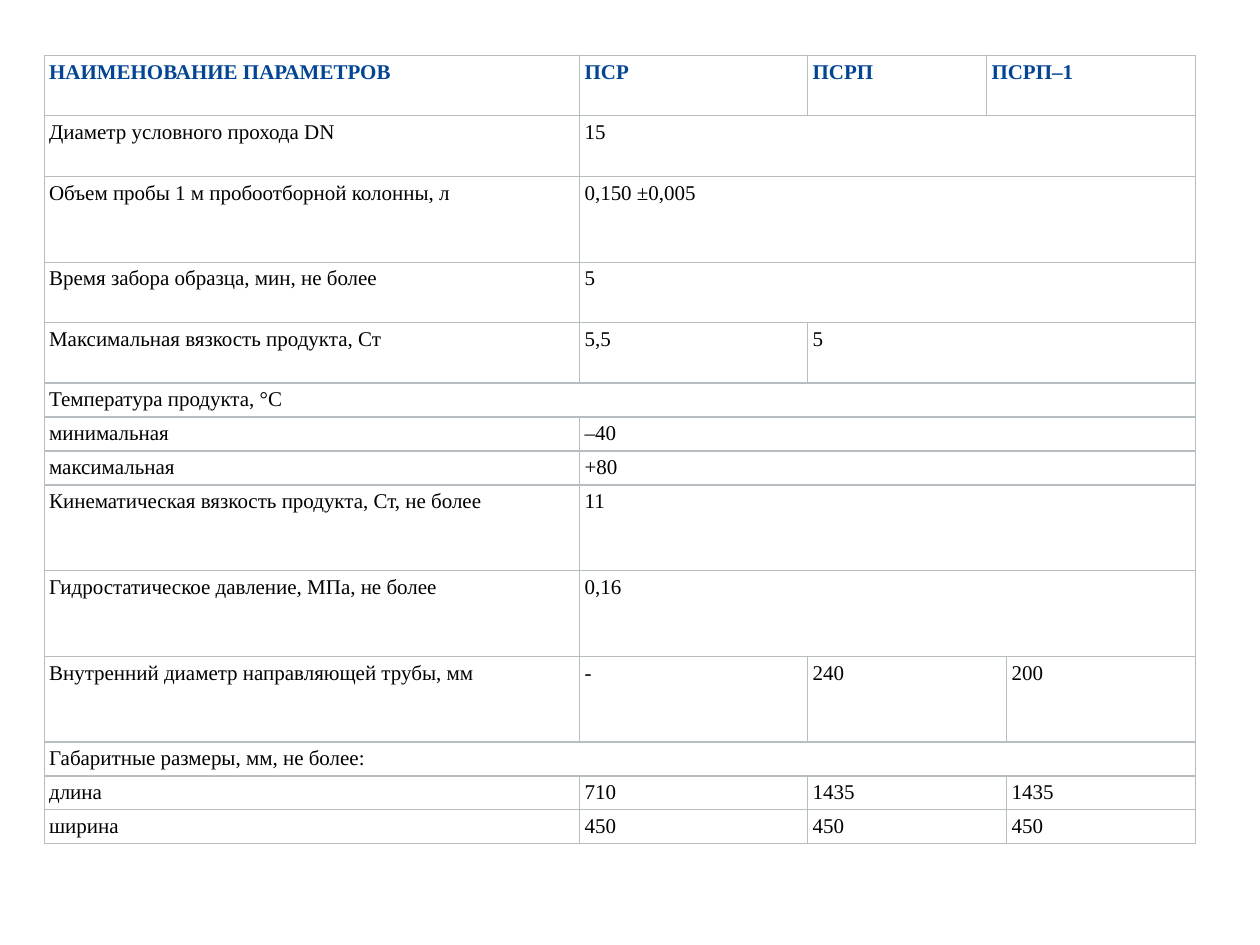
"""Build a slide with a table of sampler parameters."""
from lxml.etree import SubElement
from pptx import Presentation
from pptx.dml.color import RGBColor
from pptx.enum.text import PP_ALIGN as Align
from pptx.oxml.ns import qn
from pptx.util import Inches, Pt

GRID_COLUMNS, GRID_ROWS = 1000, 750
COLUMN_WIDTHS = (425, 181, 142, 16, 150)
SINGLE, WIDTH_ROW, DOUBLE, TRIPLE = 27, 26, 48, 68

HEADER_SPANS = (1, 1, 1, 2)
SHARED_SPANS = (1, 4)
PAIR_SPANS = (1, 1, 3)
MODEL_SPANS = (1, 1, 2, 1)
SECTION_SPANS = (5,)

PARAMETERS = (
    (DOUBLE, HEADER_SPANS, ("НАИМЕНОВАНИЕ ПАРАМЕТРОВ", "ПСР", "ПСРП", "ПСРП–1")),
    (DOUBLE, SHARED_SPANS, ("Диаметр условного прохода DN", "15")),
    (TRIPLE, SHARED_SPANS, ("Объем пробы 1 м пробоотборной колонны, л", "0,150 ±0,005")),
    (DOUBLE, SHARED_SPANS, ("Время забора образца, мин, не более", "5")),
    (DOUBLE, PAIR_SPANS, ("Максимальная вязкость продукта, Ст", "5,5", "5")),
    (SINGLE, SECTION_SPANS, ("Температура продукта, °С",)),
    (SINGLE, SHARED_SPANS, ("минимальная", "–40")),
    (SINGLE, SHARED_SPANS, ("максимальная", "+80")),
    (TRIPLE, SHARED_SPANS, ("Кинематическая вязкость продукта, Ст, не более", "11")),
    (TRIPLE, SHARED_SPANS, ("Гидростатическое давление, МПа, не более", "0,16")),
    (TRIPLE, MODEL_SPANS, ("Внутренний диаметр направляющей трубы, мм", "-", "240", "200")),
    (SINGLE, SECTION_SPANS, ("Габаритные размеры, мм, не более:",)),
    (SINGLE, MODEL_SPANS, ("длина", "710", "1435", "1435")),
    (WIDTH_ROW, MODEL_SPANS, ("ширина", "450", "450", "450")),
)


def color(value):
    """Return the colour of a hex string."""
    return RGBColor.from_string(value)


class SlideBuilder:
    """Hold the table style and the current slide."""

    font_name = "Times New Roman"
    font_size = Pt(12)
    header_color = "024594"
    text_color = "000000"
    fill_color = "FFFFFF"
    border_color = "B7BEC1"
    border_width = Pt(0.75)
    margin = Inches(0.04)

    def __init__(self, presentation):
        """Add a blank slide and measure its grid."""
        self.slide = presentation.slides.add_slide(presentation.slide_layouts[6])
        self.column = presentation.slide_width // GRID_COLUMNS
        self.row = presentation.slide_height // GRID_ROWS

    def add_table(self, left, top, widths, records):
        """Add a table whose records give height, spans and texts."""
        heights = [height for height, _, _ in records]
        frame = self.slide.shapes.add_table(
            len(records), len(widths), left * self.column, top * self.row,
            sum(widths) * self.column, sum(heights) * self.row)
        table = frame.table
        table.first_row = table.horz_banding = False
        for column, width in zip(table.columns, widths):
            column.width = width * self.column
        for row, height in zip(table.rows, heights):
            row.height = height * self.row
        for cell in table.iter_cells():
            self.style_cell(cell)
        for row_index, (_, spans, texts) in enumerate(records):
            column_index = 0
            for span, text in zip(spans, texts):
                cell = table.cell(row_index, column_index)
                column_index += span
                if span > 1:
                    cell.merge(table.cell(row_index, column_index - 1))
                self.write_cell(cell, text, row_index == 0)

    def style_cell(self, cell):
        """Set the margins, borders and fill of a cell."""
        cell.margin_left = cell.margin_right = self.margin
        cell.margin_top = cell.margin_bottom = self.margin
        properties = cell._tc.get_or_add_tcPr()
        for side in ("lnL", "lnR", "lnT", "lnB"):
            line = SubElement(properties, qn(f"a:{side}"), w=str(self.border_width))
            fill = SubElement(line, qn("a:solidFill"))
            SubElement(fill, qn("a:srgbClr"), val=self.border_color)
        cell.fill.solid()
        cell.fill.fore_color.rgb = color(self.fill_color)

    def write_cell(self, cell, text, is_header):
        """Write a justified text in a cell."""
        cell.text = text
        paragraph = cell.text_frame.paragraphs[0]
        paragraph.alignment = Align.JUSTIFY
        font = paragraph.font
        font.name = self.font_name
        font.size = self.font_size
        font.bold = is_header
        font.color.rgb = color(self.header_color if is_header else self.text_color)


def main():
    """Build and save the presentation."""
    presentation = Presentation()
    presentation.slide_width = Inches(10)
    presentation.slide_height = Inches(7.5)
    builder = SlideBuilder(presentation)
    builder.add_table(35, 44, COLUMN_WIDTHS, PARAMETERS)
    presentation.save("out.pptx")


if __name__ == "__main__":
    main()
